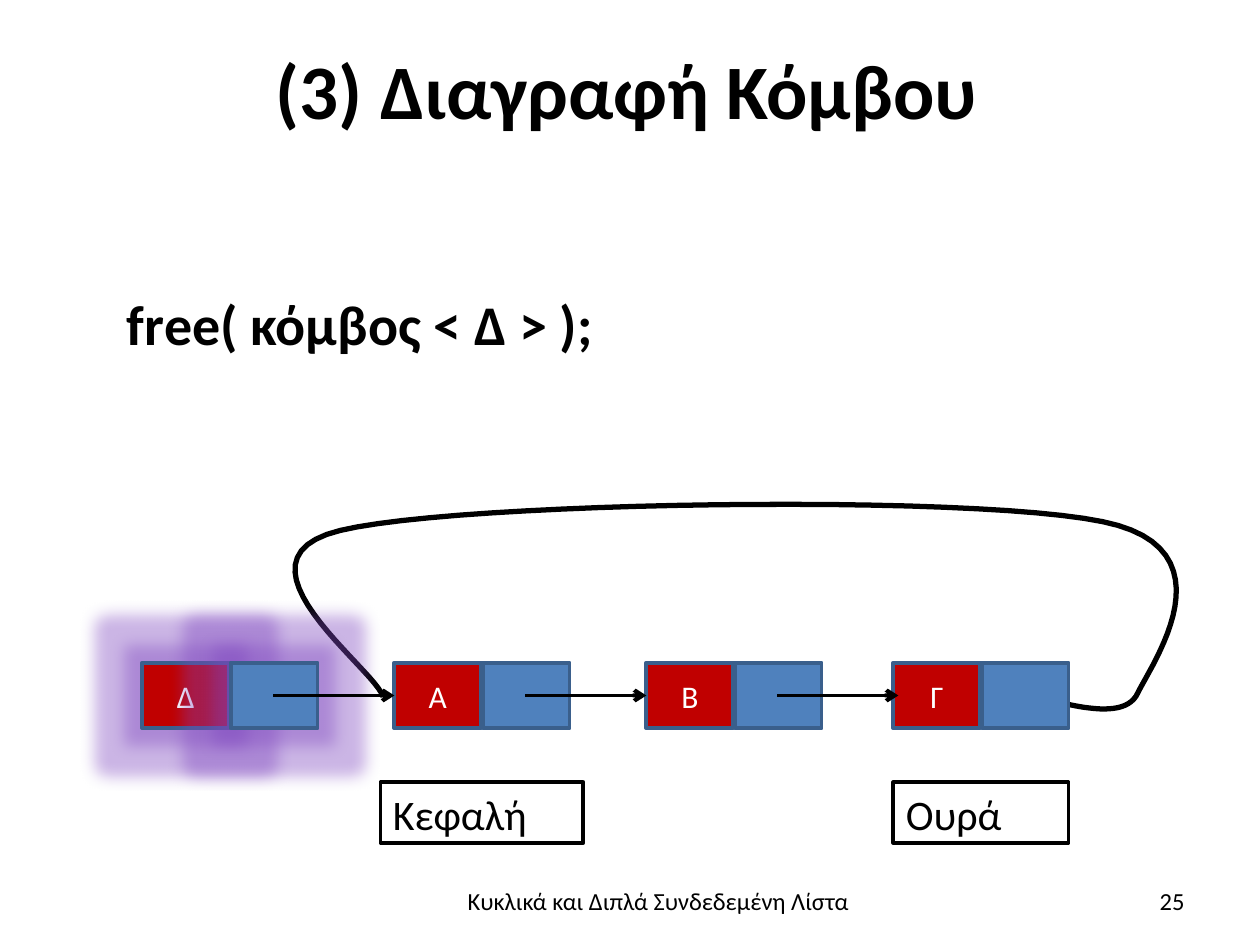
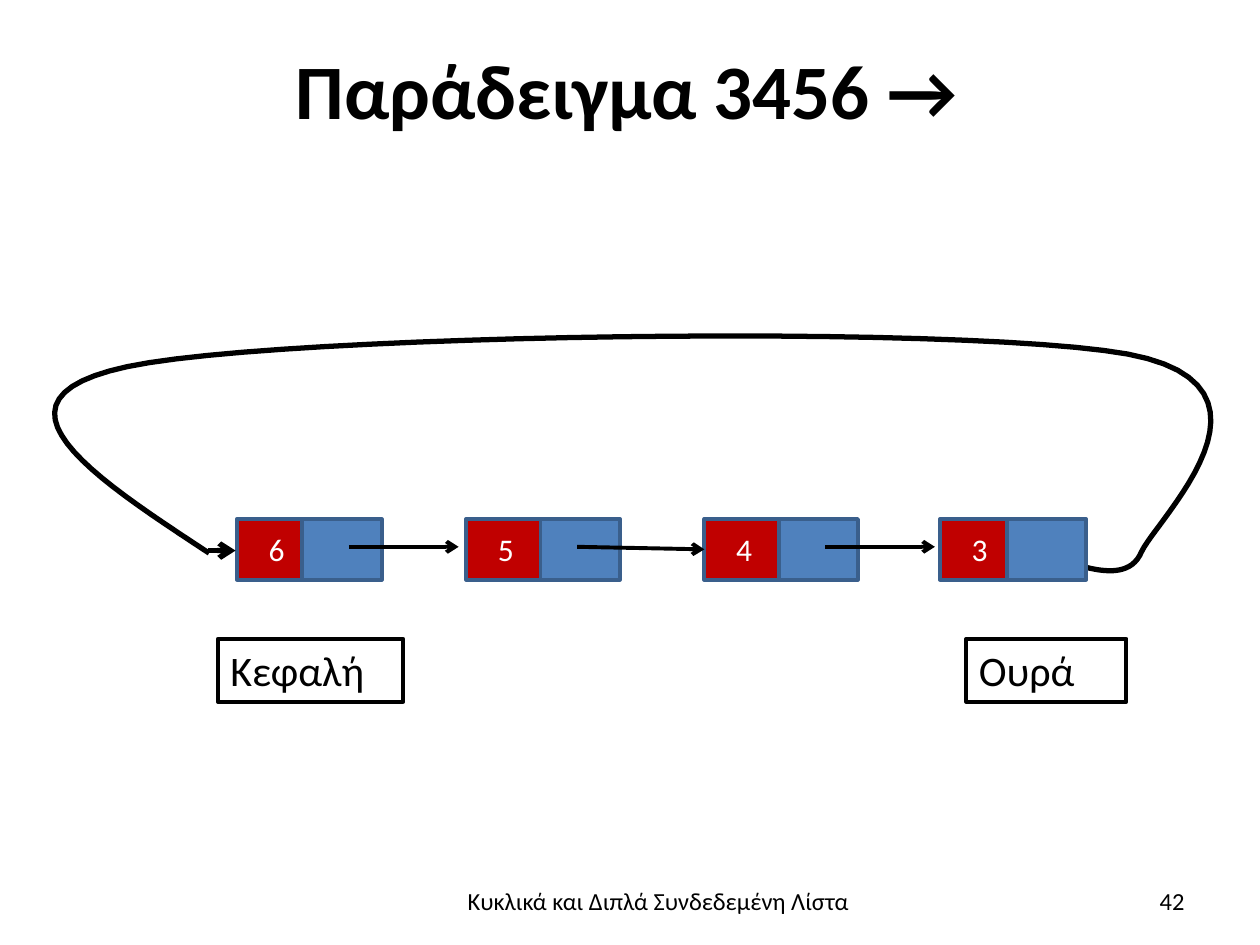
from lxml.etree import SubElement
from pptx import Presentation
from pptx.dml.color import RGBColor
from pptx.enum.shapes import MSO_CONNECTOR, MSO_SHAPE
from pptx.enum.text import MSO_ANCHOR, PP_ALIGN
from pptx.oxml.ns import qn
from pptx.util import Emu, Inches, Pt

COLORS = {"ink": "000000", "paper": "FFFFFF", "value": "C00000",
          "pointer": "4F81BD", "edge": "3A5F8C", "glow": "7F47C0"}
FONT = "Calibri"
FOOTER = "Κυκλικά και Διπλά Συνδεδεμένη Λίστα"
CURVE_STEPS = 24


def bezier(start, first, second, end):
    """Return the points that follow start on a cubic curve."""
    points = []
    for step in range(1, CURVE_STEPS + 1):
        t = step / CURVE_STEPS
        weights = ((1 - t) ** 3, 3 * t * (1 - t) ** 2, 3 * t * t * (1 - t), t ** 3)
        points.append(tuple(
            Inches(sum(w * p[axis] for w, p in zip(weights, (start, first, second, end))))
            for axis in (0, 1)))
    return points


class ListDeck:
    """Draws linked-list slides in one style."""

    def __init__(self):
        self.deck = Presentation()
        self.deck.slide_width, self.deck.slide_height = Inches(10), Inches(7.5)
        self.slide = None

    def color(self, name):
        return RGBColor.from_string(COLORS[name])

    def new_slide(self, title, number):
        self.slide = self.deck.slides.add_slide(self.deck.slide_layouts[6])
        self.text(title, 0.35, 0.01, 9.25, 1.38, 44, bold=True,
                  align=PP_ALIGN.CENTER, anchor=MSO_ANCHOR.MIDDLE)
        self.text(FOOTER, 3.48, 6.98, 3.49, 0.55, 14, align=PP_ALIGN.CENTER)
        self.text(str(number), 7.17, 6.95, 2.33, 0.4, 14,
                  align=PP_ALIGN.RIGHT, anchor=MSO_ANCHOR.MIDDLE)

    def set_words(self, shape, words, size, color="ink", bold=False,
                  align=PP_ALIGN.LEFT, anchor=MSO_ANCHOR.TOP):
        frame = shape.text_frame
        frame.text = words
        frame.word_wrap = True
        frame.vertical_anchor = anchor
        paragraph = frame.paragraphs[0]
        paragraph.alignment = align
        for run in paragraph.runs:
            run.font.name, run.font.size, run.font.bold = FONT, Pt(size), bold
            run.font.color.rgb = self.color(color)

    def text(self, words, left, top, width, height, size, **style):
        box = self.slide.shapes.add_textbox(
            Inches(left), Inches(top), Inches(width), Inches(height))
        self.set_words(box, words, size, **style)
        return box

    def outline(self, shape, color="ink", width=2.25):
        shape.line.color.rgb = self.color(color)
        shape.line.width = Pt(width)

    def label(self, words, left, top, width, height):
        self.outline(self.text(words, left, top, width, height, 24))

    def cell(self, fill, left, top, width, height, glow):
        cell = self.slide.shapes.add_shape(
            MSO_SHAPE.RECTANGLE, Inches(left), Inches(top), Inches(width), Inches(height))
        cell.shadow.inherit = False
        cell.fill.solid()
        cell.fill.fore_color.rgb = self.color(fill)
        self.outline(cell, "edge")
        if glow:
            effects = cell._element.spPr.find(qn("a:effectLst"))
            halo = SubElement(effects, qn("a:glow"), rad=str(Pt(18)))
            tint = SubElement(halo, qn("a:srgbClr"), val=COLORS["glow"])
            SubElement(tint, qn("a:alpha"), val="40000")
        return cell

    def node(self, value, left, top, width, height, offset, glow=False):
        value_cell = self.cell("value", left, top, width, height, glow)
        self.set_words(value_cell, value, 18, color="paper",
                       align=PP_ALIGN.CENTER, anchor=MSO_ANCHOR.MIDDLE)
        self.cell("pointer", left + offset, top, width, height, glow)

    def arrow(self, x1, y1, x2, y2, width=2.25):
        link = self.slide.shapes.add_connector(
            MSO_CONNECTOR.STRAIGHT, Inches(x1), Inches(y1), Inches(x2), Inches(y2))
        self.outline(link, width=width)
        properties = link._element.spPr
        SubElement(properties.find(qn("a:ln")), qn("a:tailEnd"), type="arrow")
        SubElement(properties, qn("a:effectLst"))

    def loop(self, start, *curves):
        builder = self.slide.shapes.build_freeform(
            Inches(start[0]), Inches(start[1]), scale=1.0)
        for curve in curves:
            builder.add_line_segments(bezier(start, *curve), close=False)
            start = curve[-1]
        return_link = builder.convert_to_shape(Emu(0), Emu(0))
        return_link.shadow.inherit = False
        return_link.fill.background()
        self.outline(return_link, width=3)


def deletion_slide(deck):
    """Draw the freeing of the removed node."""
    deck.new_slide("(3) Διαγραφή Κόμβου", 25)
    deck.text("free( κόμβος < Δ > );", 0.91, 2.25, 8.03, 0.65, 32, bold=True)
    deck.loop((8.12, 5.5),
              ((8.52, 5.61), (8.93, 5.72), (9.03, 5.5)),
              ((9.14, 5.27), (9.8, 4.35), (8.75, 4.14)),
              ((7.69, 3.92), (3.65, 3.98), (2.7, 4.21)),
              ((1.75, 4.44), (2.98, 5.31), (3.04, 5.53)))
    lefts = (1.13, 3.13, 5.13, 7.09)
    for value, left in zip("ΔΑΒΓ", lefts):
        deck.node(value, left, 5.26, 0.69, 0.52, 0.7, glow=value == "Δ")
    for left in lefts[:-1]:
        deck.arrow(left + 1.04, 5.52, left + 2, 5.52)
    deck.label("Κεφαλή", 3.02, 6.21, 1.61, 0.48)
    deck.label("Ουρά", 7.09, 6.21, 1.39, 0.48)


def example_slide(deck):
    """Draw the circular list of the example."""
    deck.new_slide("Παράδειγμα 3456 →", 42)
    deck.loop((8.25, 4.38),
              ((8.6, 4.51), (8.95, 4.64), (9.06, 4.38)),
              ((9.18, 4.12), (10.3, 3.06), (8.95, 2.81)),
              ((7.61, 2.57), (2.23, 2.65), (1.01, 2.91)),
              ((-0.2, 3.17), (0.73, 3.78), (1.66, 4.39)))
    for value, left, offset in (("6", 1.88, 0.52), ("5", 3.7, 0.59),
                                ("4", 5.59, 0.59), ("3", 7.46, 0.53)):
        deck.node(value, left, 4.12, 0.63, 0.48, offset)
    for x1, x2, y2 in ((2.77, 3.64, 4.34), (4.58, 5.59, 4.36), (6.55, 7.42, 4.34)):
        deck.arrow(x1, 4.34, x2, y2)
    deck.arrow(1.65, 4.37, 1.87, 4.37, width=3)
    deck.label("Κεφαλή", 1.73, 5.07, 1.47, 0.5)
    deck.label("Ουρά", 7.67, 5.07, 1.27, 0.5)


def main():
    """Build both slides and save them."""
    lists = ListDeck()
    deletion_slide(lists)
    example_slide(lists)
    lists.deck.save("out.pptx")


if __name__ == "__main__":
    main()
